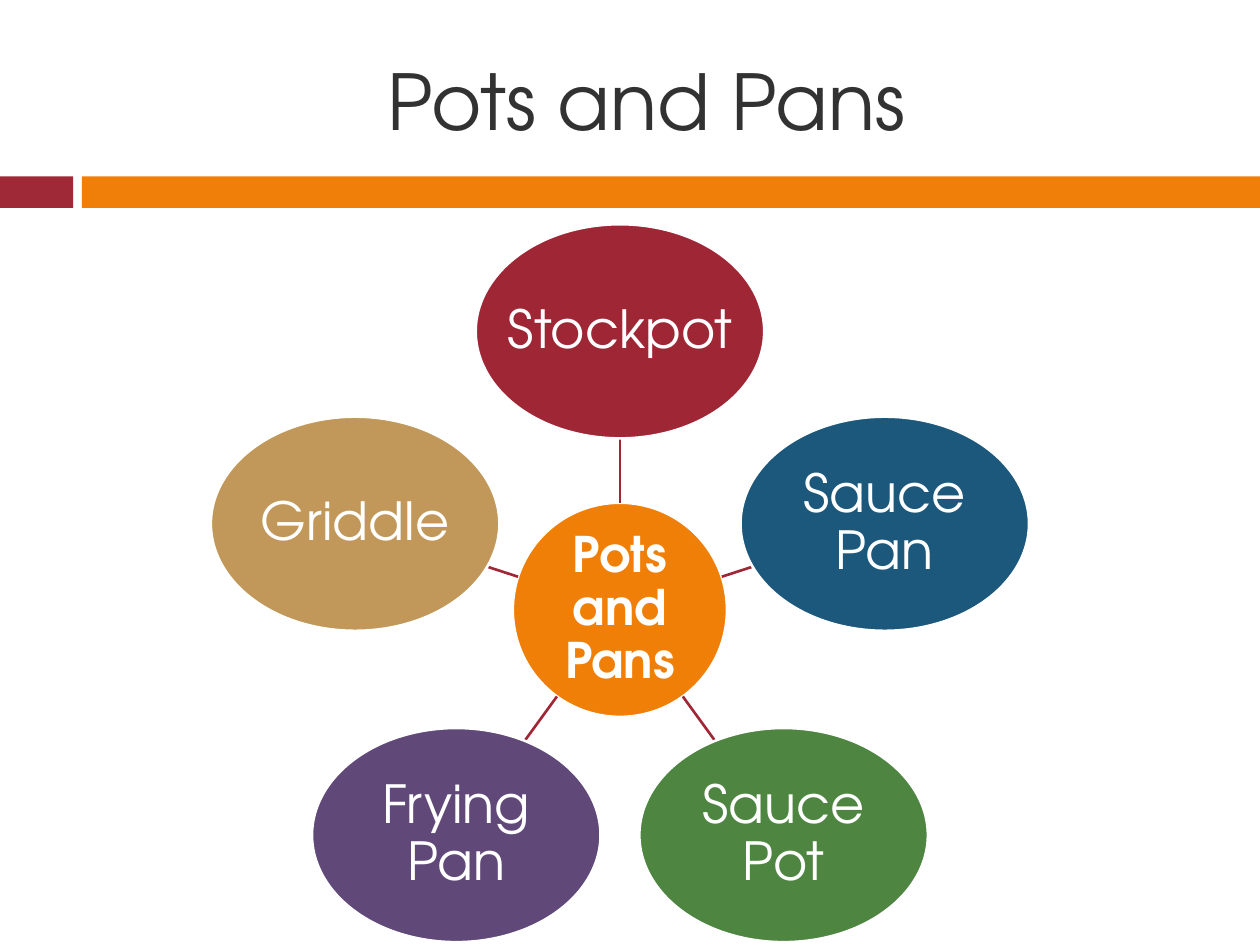
from dataclasses import dataclass
from math import cos, hypot, radians, sin

from lxml.etree import SubElement
from pptx import Presentation
from pptx.dml.color import RGBColor
from pptx.enum.shapes import MSO_CONNECTOR, MSO_SHAPE
from pptx.enum.text import MSO_ANCHOR, PP_ALIGN
from pptx.oxml.ns import qn
from pptx.shapes.autoshape import Shape
from pptx.slide import Slide
from pptx.util import Inches, Pt

FONT = "TeX Gyre Adventor"
WHITE = "FFFFFF"
CRIMSON = "9F2635"
HUB_X, HUB_Y = 4.92, 4.84
HUB_SIZE = 1.7
PAN_WIDTH, PAN_HEIGHT = 2.29, 1.7
ORBIT = 2.21


@dataclass(frozen=True)
class Bubble:
    label: str
    fill: str
    x: float
    y: float
    width: float = PAN_WIDTH
    height: float = PAN_HEIGHT
    size: int = 30
    bold: bool = False


def color(value: str) -> RGBColor:
    return RGBColor.from_string(value)


def write(shape: Shape, text: str, size: int, ink: str, bold: bool = False) -> None:
    frame = shape.text_frame
    frame.text = text
    frame.word_wrap = " " in text
    frame.vertical_anchor = MSO_ANCHOR.MIDDLE
    paragraph = frame.paragraphs[0]
    paragraph.alignment = PP_ALIGN.CENTER
    font = paragraph.runs[0].font
    font.name = FONT
    font.size = Pt(size)
    font.bold = bold
    font.color.rgb = color(ink)


def draw_band(slide: Slide, left: float, width: float, fill: str) -> None:
    band = slide.shapes.add_shape(
        MSO_SHAPE.RECTANGLE, Inches(left), Inches(1.4), Inches(width), Inches(0.25)
    )
    band.shadow.inherit = False
    band.fill.solid()
    band.fill.fore_color.rgb = color(fill)
    band.line.fill.background()


def draw_bubble(slide: Slide, bubble: Bubble) -> None:
    oval = slide.shapes.add_shape(
        MSO_SHAPE.OVAL,
        Inches(bubble.x - bubble.width / 2),
        Inches(bubble.y - bubble.height / 2),
        Inches(bubble.width),
        Inches(bubble.height),
    )
    oval.shadow.inherit = False
    oval.fill.solid()
    oval.fill.fore_color.rgb = color(bubble.fill)
    oval.line.color.rgb = color(WHITE)
    oval.line.width = Pt(1.5)
    write(oval, bubble.label, bubble.size, WHITE, bubble.bold)
    frame = oval.text_frame
    frame.margin_left = frame.margin_right = Inches(0.02)
    frame.margin_top = frame.margin_bottom = Inches(0.02)
    frame.paragraphs[0].line_spacing = 0.9


def draw_spoke(slide: Slide, angle: float) -> None:
    across, down = cos(angle), sin(angle)
    pan_reach = 1 / hypot(across / (PAN_WIDTH / 2), down / (PAN_HEIGHT / 2))
    start, end = HUB_SIZE / 2, ORBIT - pan_reach
    spoke = slide.shapes.add_connector(
        MSO_CONNECTOR.STRAIGHT,
        Inches(HUB_X + start * across),
        Inches(HUB_Y + start * down),
        Inches(HUB_X + end * across),
        Inches(HUB_Y + end * down),
    )
    spoke.line.color.rgb = color(CRIMSON)
    spoke.line.width = Pt(1.5)
    SubElement(spoke._element.spPr, qn("a:effectLst"))


def main() -> None:
    deck = Presentation()
    deck.slide_width, deck.slide_height = Inches(10), Inches(7.5)
    slide = deck.slides.add_slide(deck.slide_layouts[6])

    draw_band(slide, 0, 0.58, "9F2936")
    draw_band(slide, 0.65, 9.35, "F07F09")
    title = slide.shapes.add_textbox(
        Inches(0.67), Inches(0.25), Inches(8.92), Inches(1.08)
    )
    write(title, "Pots and Pans", 44, "323232")

    draw_bubble(
        slide,
        Bubble("Pots and Pans", "EF7F07", HUB_X, HUB_Y, HUB_SIZE, HUB_SIZE, 28, True),
    )
    pans = [
        ("Stockpot", CRIMSON),
        ("Sauce Pan", "1B587C"),
        ("Sauce Pot", "4E8541"),
        ("Frying Pan", "604878"),
        ("Griddle", "C19859"),
    ]
    for index, (label, fill) in enumerate(pans):
        angle = radians(-90 + index * 360 / len(pans))
        draw_spoke(slide, angle)
        x, y = HUB_X + ORBIT * cos(angle), HUB_Y + ORBIT * sin(angle)
        draw_bubble(slide, Bubble(label, fill, x, y))

    deck.save("out.pptx")


if __name__ == "__main__":
    main()
